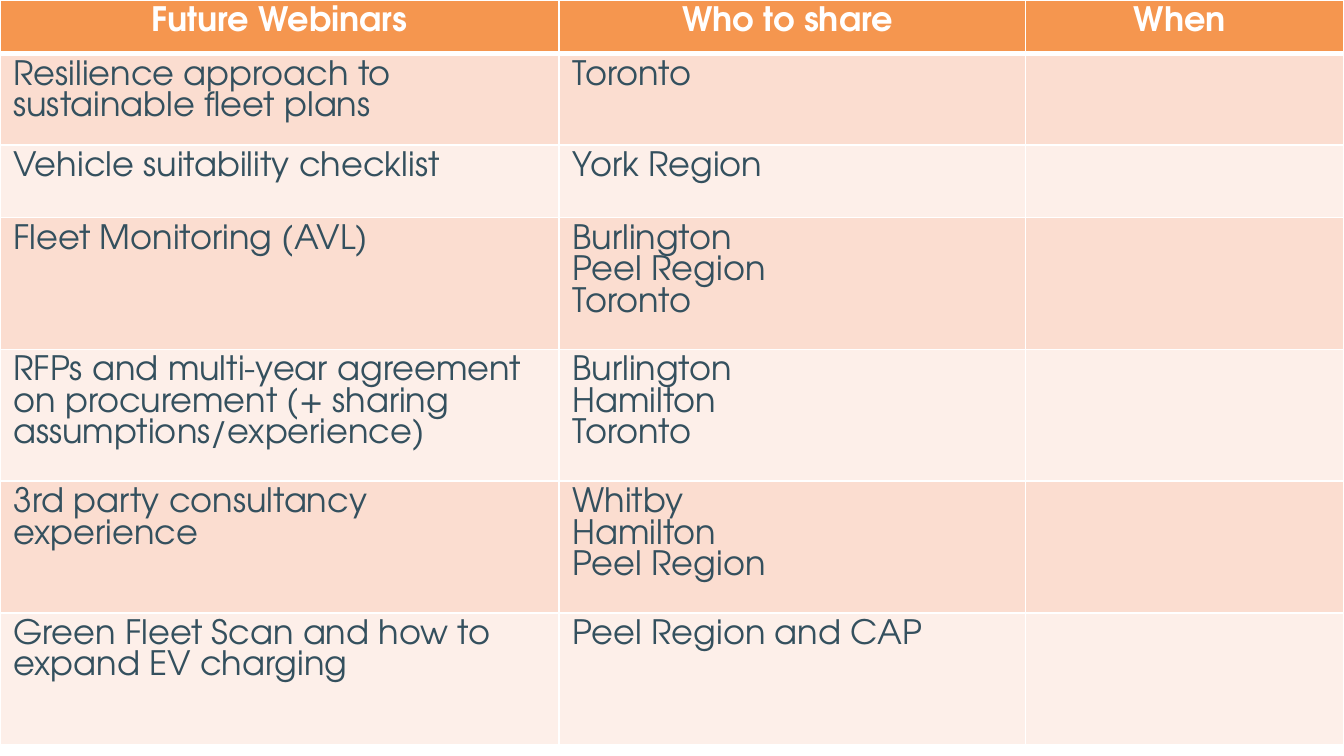
"""Build the slide with the table of future webinars."""
from lxml import etree
from pptx import Presentation, util as u
from pptx.dml.color import RGBColor
from pptx.enum import text
from pptx.oxml.ns import qn

FONT = "TeX Gyre Adventor"
COLS = [4.16, 3.47, 2.37]
ROWS = [0.4, 0.68, 0.54] + [0.98] * 4
BANDS = ["FDEFE9", "FBDDD0"]
WEBINARS = [
    ("Future Webinars", "Who to share ", "When "),
    ("Resilience approach to sustainable fleet plans", "Toronto", ""),
    ("Vehicle suitability checklist", "York Region", ""),
    ("Fleet Monitoring (AVL)", "Burlington\nPeel Region\nToronto", ""),
    ("RFPs and multi-year agreement on procurement (+ sharing assumptions/experience)",
     "Burlington\nHamilton\nToronto", ""),
    ("3rd party consultancy experience", "Whitby\nHamilton\nPeel Region", ""),
    ("Green Fleet Scan and how to expand EV charging", "Peel Region and CAP", ""),
]


def color(value):
    return RGBColor.from_string(value)


def add_border(cell, side, width):
    ln = etree.SubElement(cell._tc.get_or_add_tcPr(), qn("a:ln" + side), w=str(u.Pt(width)))
    fill = etree.SubElement(ln, qn("a:solidFill"))
    etree.SubElement(fill, qn("a:srgbClr"), val="FFFFFF")


prs = Presentation()
prs.slide_width = u.Inches(10)
prs.slide_height = prs.slide_width * 9 // 16
s = prs.slides.add_slide(prs.slide_layouts[6])
frame = s.shapes.add_table(len(ROWS), len(COLS), 0, 0, prs.slide_width, prs.slide_height)
table = frame.table
table.horz_banding = False
for column, width in zip(table.columns, COLS):
    column.width = u.Inches(width)
for row, height in zip(table.rows, ROWS):
    row.height = u.Inches(height)
frame.height = u.Inches(5.61)

for i, webinar in enumerate(WEBINARS):
    header = i == 0
    for j, words in enumerate(webinar):
        cell = table.cell(i, j)
        for side in "LRTB":
            heavy = (i, side) in [(0, "B"), (1, "T")]
            add_border(cell, side, 3 if heavy else 1)
        cell.fill.solid()
        cell.fill.fore_color.rgb = color("F5964F" if header else BANDS[i % 2])
        cell.text_frame.text = words
        for p in cell.text_frame.paragraphs:
            p.alignment = text.PP_ALIGN.CENTER if header else text.PP_ALIGN.LEFT
            p.line_spacing = u.Pt(16.8)
            for r in p.runs:
                r.font.name, r.font.size, r.font.bold = FONT, u.Pt(18), header
                r.font.color.rgb = color("FFFFFF" if header else "34505E")

prs.save("out.pptx")
